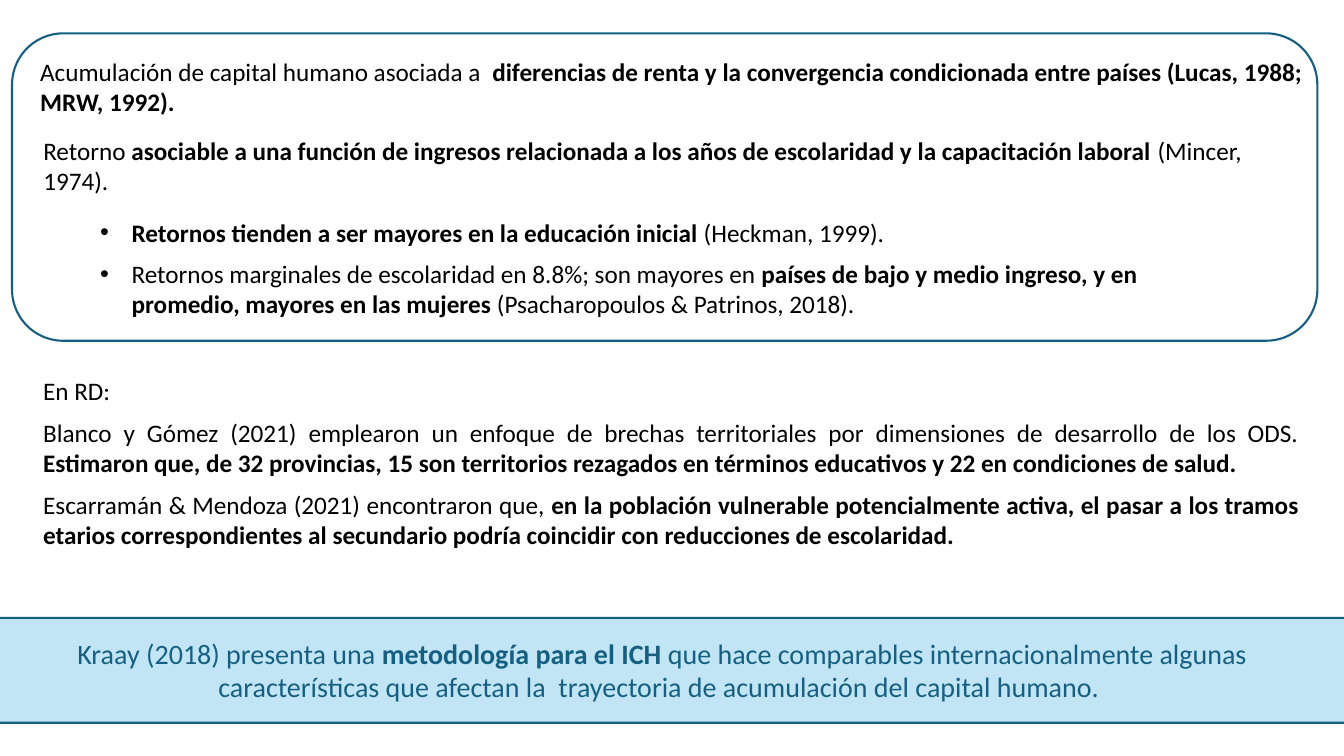
import pptx
import pptx.util
import pptx.dml.color
import pptx.enum.shapes
import pptx.enum.text
import lxml.etree

Pt = pptx.util.Pt
ALIGN = pptx.enum.text.PP_ALIGN
ROUND = pptx.enum.shapes.MSO_SHAPE.ROUNDED_RECTANGLE

# Content: a run is (text, bold)
LUCAS = [[("Acumulación de capital humano asociada a  ", False),
          ("diferencias de renta y la convergencia condicionada entre países "
           "(Lucas, 1988; MRW, 1992).", True)]]
MINCER = [[("Retorno ", False),
           ("asociable a una función de ingresos relacionada a los años de "
            "escolaridad y la capacitación laboral ", True),
           ("(Mincer, 1974).", False)]]
RETURNS = [
    [("Retornos tienden a ser mayores en la educación inicial", True),
     (" (Heckman, 1999).", False)],
    [("Retornos marginales de escolaridad en 8.8%; son mayores en ", False),
     ("países de bajo y medio ingreso, y en promedio, mayores en las mujeres", True),
     (" (Psacharopoulos & Patrinos, 2018).", False)],
]
LOCAL = [
    [("En RD:", False)],
    [("Blanco y Gómez (2021) emplearon un enfoque de brechas territoriales "
      "por dimensiones de desarrollo de los ODS. ", False),
     ("Estimaron que, de 32 provincias, 15 son territorios rezagados en "
      "términos educativos y 22 en condiciones de salud.", True)],
    [("Escarramán & Mendoza (2021) encontraron que, ", False),
     ("en la población vulnerable potencialmente activa, el pasar a los tramos "
      "etarios correspondientes al secundario podría coincidir con reducciones "
      "de escolaridad. ", True)],
]
KRAAY = [[("Kraay (2018) presenta una ", False),
          ("metodología para el ICH ", True),
          ("que hace comparables internacionalmente algunas características que "
           "afectan la  trayectoria de acumulación del capital humano. ", False)]]

COLORS = {"band": "C1E5F5", "panel": "FFFFFF", "line": "156082", "text": "000000"}

# Panels: (left, top, width, height), fill
PANELS = [((-98, 441.4, 1113, 74.9), "band"),
          ((8.6, 23.8, 932.4, 219.6), "panel")]

# Texts: (left, top, width, height), paragraphs, alignment, size, color, bullets
TEXTS = [
    ((18.7, 33.8, 933.8, 56.2), LUCAS, ALIGN.LEFT, 18, "text", False),
    ((20.9, 90, 920.2, 56.2), MINCER, ALIGN.LEFT, 18, "text", False),
    ((59.8, 146.9, 833.8, 89.3), RETURNS, ALIGN.LEFT, 18, "text", True),
    ((8.6, 447.8, 928.8, 61.9), KRAAY, ALIGN.CENTER, 20, "line", False),
    ((15.1, 256.3, 928.8, 170.6), LOCAL, ALIGN.JUSTIFY, 18, "text", False),
]
CORNER = 0.05  # inset added per unit of box height
INDENT = 22.5


def put(item, values):
    for name, value in values.items():
        setattr(item, name, value)


def color(name):
    return pptx.dml.color.RGBColor.from_string(COLORS[name])


def add_panel(slide, box, fill):
    panel = slide.shapes.add_shape(ROUND, *map(Pt, box))
    panel.shadow.inherit = False
    panel.fill.solid()
    panel.fill.fore_color.rgb = color(fill)
    panel.line.color.rgb = color("line")
    panel.line.width = Pt(1.5)


def add_bullet(para):
    props = para._p.get_or_add_pPr()
    props.set("marL", str(Pt(INDENT)))
    props.set("indent", str(-Pt(INDENT)))
    for tag, key, value in (("a:buFont", "typeface", "Arial"),
                            ("a:buChar", "char", "•")):
        mark = lxml.etree.SubElement(props, pptx.oxml.ns.qn(tag))
        mark.set(key, value)


def add_text(slide, box, paras, align, size, ink, bullets):
    frame = slide.shapes.add_textbox(*map(Pt, box)).text_frame
    inset = CORNER * box[3]
    side, edge = Pt(7.2 + inset), Pt(3.6 + inset)
    put(frame, {"word_wrap": True, "margin_left": side, "margin_right": side,
                "margin_top": edge, "margin_bottom": edge,
                "vertical_anchor": pptx.enum.text.MSO_ANCHOR.TOP})
    for i, runs in enumerate(paras):
        para = frame.add_paragraph() if i else frame.paragraphs[0]
        put(para, {"alignment": align, "space_after": Pt(8)})
        if bullets:
            add_bullet(para)
        for text, bold in runs:
            run = para.add_run()
            run.text = text
            put(run.font, {"name": "Calibri", "size": Pt(size), "bold": bold})
            run.font.color.rgb = color(ink)


def main():
    deck = pptx.Presentation()
    put(deck, {"slide_width": Pt(960), "slide_height": Pt(540)})
    slide = deck.slides.add_slide(deck.slide_layouts[6])
    # Band and framed panel
    for panel in PANELS:
        add_panel(slide, *panel)
    # Text blocks
    for text in TEXTS:
        add_text(slide, *text)
    deck.save("out.pptx")


if __name__ == "__main__":
    main()
